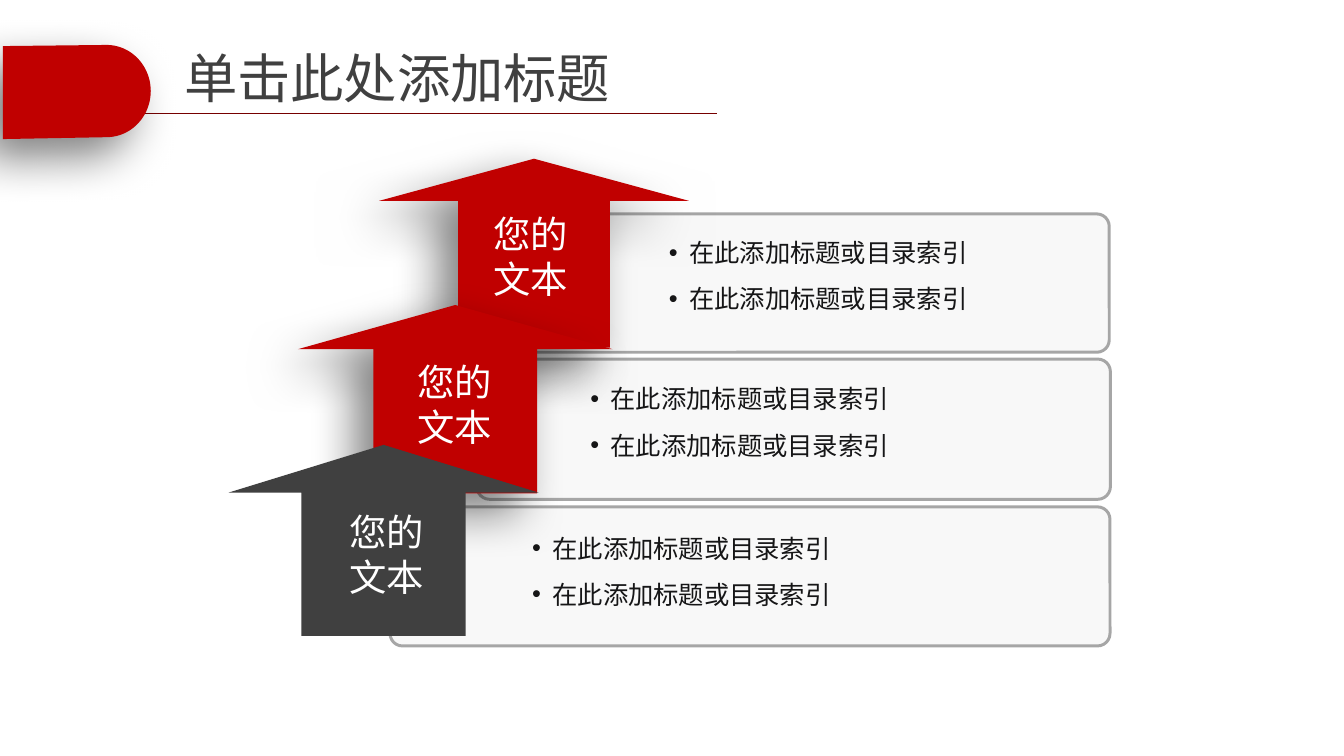
from dataclasses import dataclass
from math import cos, pi, sin

from lxml.etree import SubElement
from pptx import Presentation
from pptx.dml.color import RGBColor
from pptx.enum.shapes import MSO_CONNECTOR, MSO_SHAPE
from pptx.enum.text import MSO_ANCHOR, PP_ALIGN
from pptx.oxml.ns import qn
from pptx.util import Cm, Pt

RED, DARK, WHITE = "C00000", "404040", "FFFFFF"
CJK = "Noto Sans CJK SC"
BULLET_INDENT = Cm(0.54)


@dataclass
class Box:
    x: float
    y: float
    w: float
    h: float

    def emu(self) -> list:
        return [Cm(v) for v in (self.x, self.y, self.w, self.h)]


@dataclass
class Step:
    panel: Box
    bullets: Box
    arrow: Box
    label: Box
    shaft: float
    head: float
    color: str
    shadow: bool


STEPS = [
    Step(Box(12.57, 5.66, 16.78, 3.66), Box(17.42, 6.05, 10.87, 2.51),
         Box(10.03, 4.2, 8.2, 5), Box(12.75, 5.43, 2.59, 2.67), 0.49, 0.223, RED, True),
    Step(Box(12.62, 9.5, 16.76, 3.71), Box(15.34, 9.92, 12.04, 2.51),
         Box(7.88, 8.07, 8.33, 4.98), Box(10.74, 9.35, 2.59, 2.67), 0.52, 0.235, RED, True),
    Step(Box(10.32, 13.41, 19.05, 3.68), Box(13.8, 13.87, 12.04, 2.51),
         Box(6.05, 11.77, 8.2, 5.05), Box(8.94, 13.32, 2.59, 2.67), 0.53, 0.25, DARK, False),
]


def rgb(color: str) -> RGBColor:
    return RGBColor.from_string(color)


def apply(target, formats: dict) -> None:
    for name, value in formats.items():
        setattr(target, name, value)


def paint(sp, fill: str, line: str = "", width: float = 0, shadow: bool = False) -> None:
    sp.shadow.inherit = False
    sp.fill.solid()
    sp.fill.fore_color.rgb = rgb(fill)
    if line:
        sp.line.color.rgb = rgb(line)
        sp.line.width = Pt(width)
    else:
        sp.line.fill.background()
    if shadow:
        effects = sp._element.spPr.find(qn("a:effectLst"))
        outer = SubElement(effects, qn("a:outerShdw"), blurRad=str(Pt(35)),
                           dist=str(Pt(20)), dir=str(135 * 60000), rotWithShape="0")
        clr = SubElement(outer, qn("a:srgbClr"), val="000000")
        SubElement(clr, qn("a:alpha"), val="50000")


def add_text(shapes, box: Box, lines: list[str], size: float, color: str,
             font: str = CJK, bullet: bool = False, frame: dict | None = None,
             para: dict | None = None) -> None:
    tf = shapes.add_textbox(*box.emu()).text_frame
    apply(tf, {"word_wrap": True, **(frame or {})})
    for i, line in enumerate(lines):
        p = tf.paragraphs[0] if i == 0 else tf.add_paragraph()
        if bullet:
            pPr = p._p.get_or_add_pPr()
            pPr.set("marL", str(BULLET_INDENT))
            pPr.set("indent", str(-BULLET_INDENT))
            SubElement(pPr, qn("a:buFont"), typeface="Arial")
            SubElement(pPr, qn("a:buChar"), char="•")
        apply(p, para or {})
        if i:
            p.space_before = Pt(size / 2)
        r = p.add_run()
        r.text = line
        apply(r.font, {"size": Pt(size), "name": font})
        r.font.color.rgb = rgb(color)
        SubElement(r._r.get_or_add_rPr(), qn("a:ea"), typeface=CJK)


def add_header(shapes) -> None:
    # Rule under the title
    rule = shapes.add_connector(MSO_CONNECTOR.STRAIGHT, Cm(2.34), Cm(3.01), Cm(18.97), Cm(3.01))
    rule.line.color.rgb = rgb("760000")
    rule.line.width = Pt(0.75)
    SubElement(rule._element.spPr, qn("a:effectLst"))

    # Red tab with a rounded right end
    angles = [-pi / 2 + pi * i / 48 for i in range(49)]
    arc = [(Cm(2.82 + 1.17 * cos(a)), Cm(2.41 + 1.22 * sin(a))) for a in angles]
    fb = shapes.build_freeform(Cm(0.08), Cm(1.22))
    fb.add_line_segments(arc + [(Cm(0.08), Cm(3.68))], close=True)
    paint(fb.convert_to_shape(), RED, shadow=True)


def add_panel(shapes, step: Step) -> None:
    sp = shapes.add_shape(MSO_SHAPE.ROUNDED_RECTANGLE, *step.panel.emu())
    sp.adjustments[0] = 0.09
    paint(sp, "F8F8F8", "A6A6A6", 2.25)


def add_bullets(shapes, step: Step) -> None:
    frame = {"margin_left": Cm(0.28), "margin_right": Cm(0.28),
             "margin_top": Cm(0.15), "margin_bottom": Cm(0.15)}
    add_text(shapes, step.bullets, ["在此添加标题或目录索引"] * 2, 19, "161617",
             bullet=True, frame=frame, para={"line_spacing": 1.1})


def add_arrow(shapes, step: Step) -> None:
    group = shapes.add_group_shape().shapes
    sp = group.add_shape(MSO_SHAPE.UP_ARROW, *step.arrow.emu())
    sp.adjustments[0], sp.adjustments[1] = step.shaft, step.head
    paint(sp, step.color, shadow=step.shadow)
    add_text(group, step.label, ["您的文本"], 28, WHITE,
             frame={"vertical_anchor": MSO_ANCHOR.MIDDLE},
             para={"alignment": PP_ALIGN.CENTER})


def main() -> None:
    prs = Presentation()
    prs.slide_width, prs.slide_height = Cm(35.56), Cm(20)
    s = prs.slides.add_slide(prs.slide_layouts[6])

    add_header(s.shapes)
    # Panels lie behind all the bullets, arrows in front
    for draw in (add_panel, add_bullets, add_arrow):
        for step in STEPS:
            draw(s.shapes, step)

    # Title
    add_text(s.shapes, Box(4.57, 0.78, 24.05, 2.51), ["单击此处添加标题"], 40, DARK, "Arial",
             frame={"vertical_anchor": MSO_ANCHOR.MIDDLE, "margin_left": Cm(0.3),
                    "margin_right": Cm(0.3), "margin_top": Cm(0.15),
                    "margin_bottom": Cm(0.15)})
    prs.save("out.pptx")


if __name__ == "__main__":
    main()
